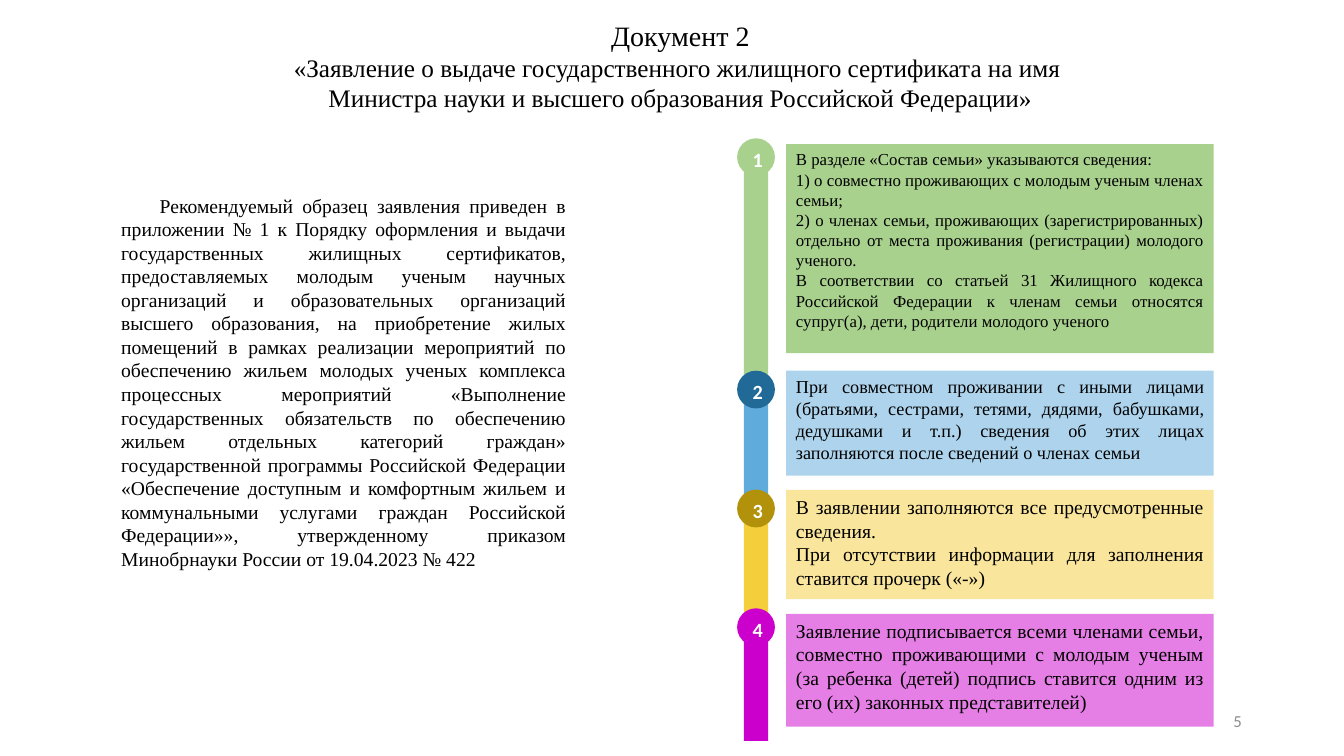
import pptx
import pptx.util
import pptx.dml.color
import pptx.enum.shapes
import pptx.enum.text
import pptx.oxml
import pptx.oxml.ns

Pt = pptx.util.Pt
Align = pptx.enum.text.PP_ALIGN
Anchor = pptx.enum.text.MSO_ANCHOR
Kind = pptx.enum.shapes.MSO_SHAPE

TITLE = [
    "Документ 2",
    "«Заявление о выдаче государственного жилищного сертификата на имя ",
    "Министра науки и высшего образования Российской Федерации»",
]
SAMPLE = [
    "Рекомендуемый образец заявления приведен в приложении № 1 к Порядку "
    "оформления и выдачи государственных жилищных сертификатов, предоставляемых "
    "молодым ученым научных организаций и образовательных организаций высшего "
    "образования, на приобретение жилых помещений в рамках реализации мероприятий "
    "по обеспечению жильем молодых ученых комплекса процессных мероприятий "
    "«Выполнение государственных обязательств по обеспечению жильем отдельных "
    "категорий граждан» государственной программы Российской Федерации "
    "«Обеспечение доступным и комфортным жильем и коммунальными услугами граждан "
    "Российской Федерации»», утвержденному приказом Минобрнауки России "
    "от 19.04.2023 № 422"
]
PAGE = ["5"]

# Each step: bar top, badge top, card top, card height, text size,
# bar colour, badge colour, card opacity in percent, paragraphs
STEPS = [
    (103, 98.75, 103, 149.2, 12, "A9D18E", "A9D18E", 100, [
        "В разделе «Состав семьи» указываются сведения: ",
        "1) о совместно проживающих с молодым ученым членах семьи;",
        "2) о членах семьи, проживающих (зарегистрированных) отдельно от места "
        "проживания (регистрации) молодого ученого.",
        "В соответствии со статьей 31 Жилищного кодекса Российской Федерации "
        "к членам семьи относятся супруг(а), дети, родители молодого ученого",
    ]),
    (272, 264.75, 264.75, 75, 13, "5FABDC", "216A97", 50, [
        "При совместном проживании с иными лицами (братьями, сестрами, тетями, "
        "дядями, бабушками, дедушками и т.п.) сведения об этих лицах заполняются "
        "после сведений о членах семьи",
    ]),
    (356.5, 349.75, 350, 78, 14, "F4CF3B", "B2920A", 50, [
        "В заявлении заполняются все предусмотренные сведения. ",
        "При отсутствии информации для заполнения ставится прочерк («-»)",
    ]),
    (442, 434.5, 438.5, 80.5, 14, "CC00CC", "CC00CC", 50, [
        "Заявление подписывается всеми членами семьи, совместно проживающими "
        "с молодым ученым (за ребенка (детей) подпись ставится одним из его (их) "
        "законных представителей)",
    ]),
]
END = 529.25
BAR_X, BAR_W = 531.35, 17.3
DOT_X, DOT_W = 526.5, 27
CARD_X, CARD_W = 561.5, 305.5

THEME = {
    "serif": "Times New Roman", "sans": "Calibri",
    "ink": "000000", "paper": "FFFFFF", "grey": "8C8C8C",
    "head": 20, "sub": 18, "body": 14, "badge": 18, "page": 12,
}


def rgb(code):
    return pptx.dml.color.RGBColor.from_string(code)


def write(shape, lines, sizes, align, font="serif", ink="ink",
          anchor=Anchor.TOP, bold=False):
    frame = shape.text_frame
    frame.word_wrap = True
    frame.vertical_anchor = anchor
    frame.text = "\n".join(lines)
    for para, size in zip(frame.paragraphs, sizes):
        para.alignment = align
        for run in para.runs:
            run.font.name = THEME[font]
            run.font.size = Pt(size)
            run.font.bold = bold
            run.font.color.rgb = rgb(THEME[ink])


def block(kind, box, color, alpha=100):
    """Add a borderless filled shape, alpha being its opacity in percent."""
    shape = slide.shapes.add_shape(kind, *map(Pt, box))
    shape.shadow.inherit = False
    shape.line.fill.background()
    shape.fill.solid()
    shape.fill.fore_color.rgb = rgb(color)
    if alpha < 100:
        tone = shape.fill._xPr.find(".//" + pptx.oxml.ns.qn("a:srgbClr"))
        node = pptx.oxml.parse_xml(
            f'<a:alpha {pptx.oxml.ns.nsdecls("a")} val="{alpha * 1000}"/>')
        tone.append(node)
    return shape


def label(box):
    return slide.shapes.add_textbox(*map(Pt, box))


def badge(top, color, num):
    dot = block(Kind.OVAL, (DOT_X, top, DOT_W, DOT_W), color)
    write(dot, [str(num)], [THEME["badge"]], Align.CENTER, "sans", "paper",
          Anchor.MIDDLE, True)
    run = dot.text_frame.paragraphs[0].runs[0]
    run.font._element.set("cap", "small")


deck = pptx.Presentation()
deck.slide_width, deck.slide_height = Pt(960), Pt(540)
slide = deck.slides.add_slide(deck.slide_layouts[6])

sample = block(Kind.RECTANGLE, (79.5, 134.75, 332, 278.5), THEME["paper"])
write(sample, SAMPLE, [THEME["body"]], Align.JUSTIFY)
sample.text_frame.paragraphs[0]._p.get_or_add_pPr().set("indent", str(Pt(27.5)))

write(label((132.5, 9.5, 707, 75)), TITLE,
      [THEME["head"], THEME["sub"], THEME["sub"]], Align.CENTER)

ends = [step[0] for step in STEPS[1:]] + [END]
for step, end in zip(STEPS, ends):
    block(Kind.RECTANGLE, (BAR_X, step[0], BAR_W, end - step[0]), step[5])

for num, step in enumerate(STEPS, 1):
    _, dot_y, card_y, high, size, color, dark, alpha, lines = step
    badge(dot_y, dark, num)
    card = block(Kind.RECTANGLE, (CARD_X, card_y, CARD_W, high), color, alpha)
    write(card, lines, [size] * len(lines), Align.JUSTIFY)

write(label((678.25, 500.5, 216, 28.75)), PAGE, [THEME["page"]], Align.RIGHT,
      "sans", "grey", Anchor.MIDDLE)

deck.save("out.pptx")
